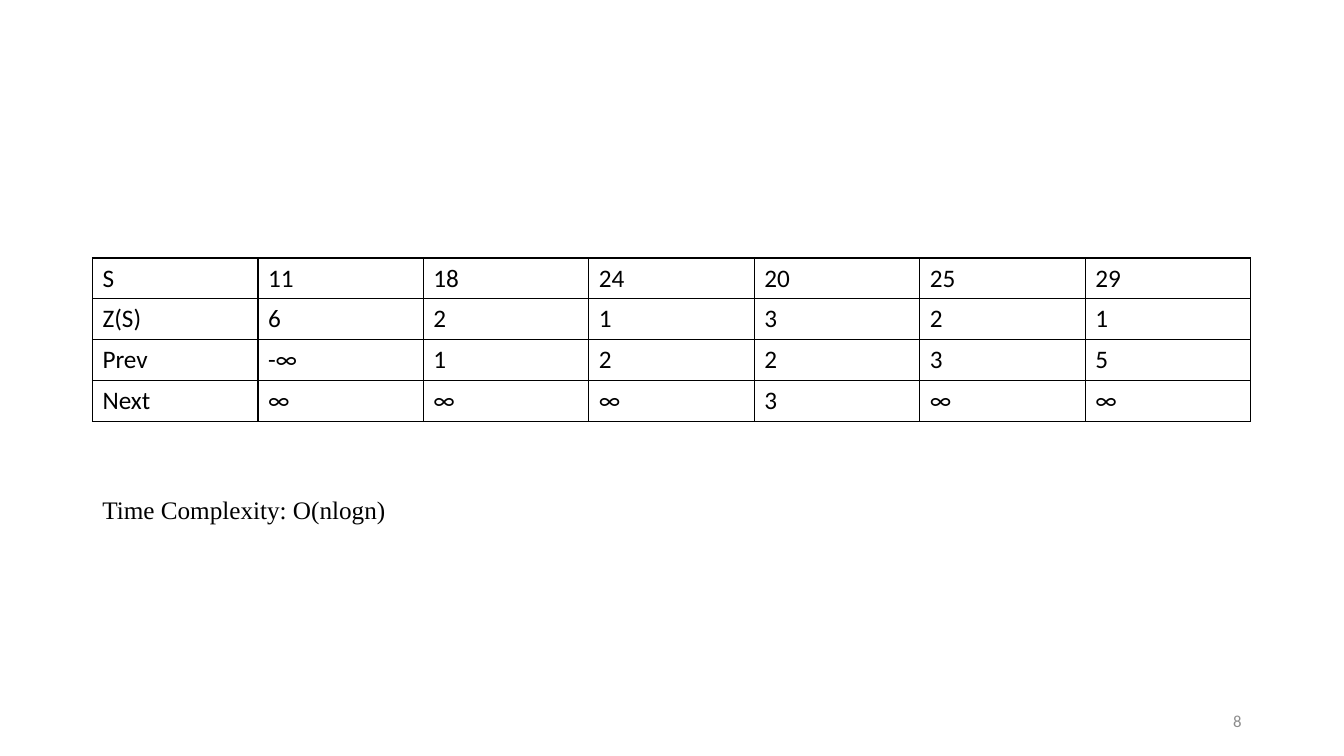
from lxml import etree
from pptx import Presentation
from pptx.dml.color import RGBColor
from pptx.enum.text import MSO_ANCHOR, MSO_AUTO_SIZE, PP_ALIGN
from pptx.oxml.ns import qn
from pptx.util import Cm, Pt

LEFT, RIGHT = PP_ALIGN.LEFT, PP_ALIGN.RIGHT
TOP, MIDDLE = MSO_ANCHOR.TOP, MSO_ANCHOR.MIDDLE
FIT_SHAPE = MSO_AUTO_SIZE.SHAPE_TO_FIT_TEXT
BLANK_LAYOUT = 6
COLORS = {"ink": "000000", "page_number": "8C8C8C"}
COLUMN_WIDTH, ROW_HEIGHT = Cm(4.17), Cm(1.03)

ROWS = [
    ["S", "11", "18", "24", "20", "25", "29"],
    ["Z(S)", "6", "2", "1", "3", "2", "1"],
    ["Prev", "-∞", "1", "2", "2", "3", "5"],
    ["Next", "∞", "∞", "∞", "3", "∞", "∞"],
]


def write_text(frame, text, font_name, size, color):
    frame.text = text
    font = frame.paragraphs[0].runs[0].font
    font.name = font_name
    font.size = Pt(size)
    font.bold = False
    font.color.rgb = RGBColor.from_string(COLORS[color])


def outline_cell(cell, color):
    cell.fill.background()
    properties = cell._tc.get_or_add_tcPr()
    for position, side in enumerate(("lnL", "lnR", "lnT", "lnB")):
        line = etree.Element(qn("a:" + side), w=str(Pt(1)))
        fill = etree.SubElement(line, qn("a:solidFill"))
        etree.SubElement(fill, qn("a:srgbClr"), val=COLORS[color])
        properties.insert(position, line)


deck = Presentation()
deck.slide_width, deck.slide_height = Cm(33.87), Cm(19.05)
page = deck.slides.add_slide(deck.slide_layouts[BLANK_LAYOUT])

column_count, row_count = len(ROWS[0]), len(ROWS)
table = page.shapes.add_table(
    row_count, column_count, Cm(2.33), Cm(6.5),
    COLUMN_WIDTH * column_count, ROW_HEIGHT * row_count,
).table
table.first_row = False
table.horz_banding = False
for column in table.columns:
    column.width = COLUMN_WIDTH
for row, values in zip(table.rows, ROWS):
    row.height = ROW_HEIGHT
    for cell, value in zip(row.cells, values):
        write_text(cell.text_frame, value, "Calibri", 18, "ink")
        outline_cell(cell, "ink")

complexity_box = page.shapes.add_textbox(Cm(2.33), Cm(12.32), Cm(18.64), Cm(1.03))
number_box = page.shapes.add_textbox(Cm(23.92), Cm(17.66), Cm(7.62), Cm(1.01))
write_text(complexity_box.text_frame, "Time Complexity: O(nlogn)", "Times New Roman", 18, "ink")
write_text(number_box.text_frame, "8", "Calibri", 12, "page_number")
for box, anchor, alignment in (
    (complexity_box, TOP, LEFT),
    (number_box, MIDDLE, RIGHT),
):
    box.text_frame.word_wrap = True
    box.text_frame.vertical_anchor = anchor
    box.text_frame.paragraphs[0].alignment = alignment
complexity_box.text_frame.auto_size = FIT_SHAPE

deck.save("out.pptx")
